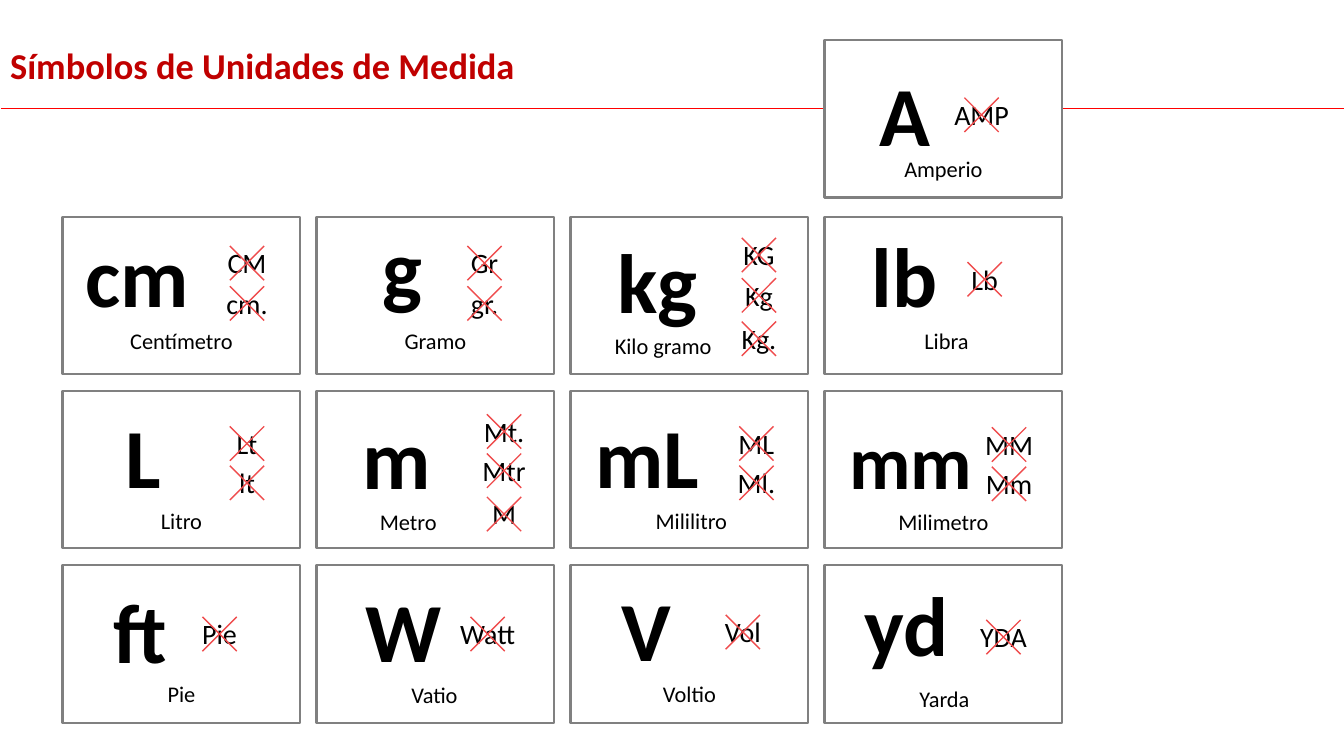
import pptx
import pptx.util
import pptx.dml.color
import pptx.enum.shapes
import pptx.enum.text
import pptx.oxml.ns
from lxml import etree

Pt = pptx.util.Pt
ALIGN = pptx.enum.text.PP_ALIGN
FONT = "Calibri"
COLORS = {"title": "C00000", "rule": "FF0000", "cross": "EF4C4D",
          "border": "808080", "card": "FFFFFF", "text": "000000"}

# Card grid
CARD_WIDTH, CARD_HEIGHT = 169.92, 112.32
FIRST_LEFT, COLUMN_STEP = 44.64, 181.44
ROW_TOPS = (28.8, 154.8, 279.36, 403.92)
NARROW = 131
CROSS_SIZE = 24.5

# Offsets are measured from the corner of each card:
# column, row, (symbol, left, top, width, height, size), (name, left, top, width),
# centre of the wrong forms, [(wrong form, width, top), ...]
CARDS = [
    (3, 0, ("A", 32.4, 12.2, 51.1, 80, 60), ("Amperio", 0, 78.5, CARD_WIDTH),
     112.2, [("AMP", 54, 37.4)]),
    (0, 1, ("cm", 9.4, 1.4, 89.3, 80, 60), ("Centímetro", 0, 75.6, CARD_WIDTH),
     131.8, [("CM", 42.5, 17.3), ("cm.", 44.6, 46.1)]),
    (1, 1, ("g", 40.3, -4.3, 43.2, 80, 60), ("Gramo", 0, 75.6, CARD_WIDTH),
     120, [("Gr", 34.6, 17.3), ("gr.", 33.8, 46.1)]),
    (2, 1, ("kg", 26.6, 5.8, 72, 80, 60), ("Kilo gramo", 0.7, 79.2, NARROW),
     134.6, [("KG", 36.7, 11.5), ("Kg", 34.6, 40.3), ("Kg.", 39.6, 71.3)]),
    (3, 1, ("lb", 26.6, 1.4, 61.9, 80, 60), ("Libra", 2.2, 75.6, CARD_WIDTH),
     114.4, [("Lb", 33.8, 28.8)]),
    (0, 2, ("L", 38.2, 5.8, 40.3, 80, 60), ("Litro", 0, 79.2, CARD_WIDTH),
     131.8, [("Lt", 29.5, 21.6), ("lt", 25.9, 49.7)]),
    (1, 2, ("m", 25.9, 6.5, 64.1, 80, 60), ("Metro", 0, 79.9, NARROW),
     134, [("Mt.", 43.9, 13), ("Mtr", 45.4, 41), ("M", 31.7, 72)]),
    (2, 2, ("mL", 10.8, 5.8, 89.3, 80, 60), ("Mililitro", 1.4, 79.2, CARD_WIDTH),
     132.8, [("ML", 40.3, 21.6), ("Ml.", 41.8, 49.7)]),
    (3, 2, ("mm", 10.8, 13, 103, 72.7, 54), ("Milimetro", 0, 79.9, CARD_WIDTH),
     131.8, [("MM", 49, 22.3), ("Mm", 48.2, 50.4)]),
    (0, 3, ("ft", 29.5, 6.5, 54.7, 80, 60), ("Pie", 0, 78.5, CARD_WIDTH),
     112.2, [("Pie", 39.6, 33.1)]),
    (1, 3, ("W", 28.1, 5.8, 69.1, 80, 60), ("Vatio", -0.7, 79.2, CARD_WIDTH),
     122.2, [("Watt", 54.7, 33.1)]),
    (2, 3, ("V", 29.5, 5, 50.4, 80, 60), ("Voltio", 0, 78.5, CARD_WIDTH),
     123.1, [("Vol", 40.3, 31.7)]),
    (3, 3, ("yd", 21.6, 1.4, 74.9, 80, 60), ("Yarda", 0.7, 82.1, CARD_WIDTH),
     127.8, [("YDA", 48.2, 35.3)]),
]


def color(name):
    return pptx.dml.color.RGBColor.from_string(COLORS[name])


def set_font(paragraph, size, color_name, bold=False):
    paragraph.font.name = FONT
    paragraph.font.size = Pt(size)
    paragraph.font.bold = bold
    paragraph.font.color.rgb = color(color_name)


def add_text(page, text, left, top, width, height, size,
             align=ALIGN.CENTER, bold=False, wrap=False):
    box = page.shapes.add_textbox(Pt(left), Pt(top), Pt(width), Pt(height))
    frame = box.text_frame
    frame.word_wrap = wrap
    frame.auto_size = pptx.enum.text.MSO_AUTO_SIZE.SHAPE_TO_FIT_TEXT
    paragraph = frame.paragraphs[0]
    paragraph.text = text
    paragraph.alignment = align
    set_font(paragraph, size, "text", bold)


def add_line(shapes, left, top, right, bottom, color_name, width):
    line = shapes.add_connector(pptx.enum.shapes.MSO_CONNECTOR.STRAIGHT,
                                Pt(left), Pt(top), Pt(right), Pt(bottom))
    line.line.color.rgb = color(color_name)
    line.line.width = Pt(width)
    properties = line._element.spPr
    etree.SubElement(properties, pptx.oxml.ns.qn("a:effectLst"))


def add_cross(page, left, top):
    cross = page.shapes.add_group_shape()
    right, bottom = left + CROSS_SIZE, top + CROSS_SIZE
    add_line(cross.shapes, left, top, right, bottom, "cross", 1)
    add_line(cross.shapes, left, bottom, right, top, "cross", 1)


def add_card(page, column, row, symbol, name, centre, wrong_forms):
    left = FIRST_LEFT + column * COLUMN_STEP
    top = ROW_TOPS[row]
    # Frame
    card = page.shapes.add_shape(pptx.enum.shapes.MSO_SHAPE.RECTANGLE, Pt(left),
                                 Pt(top), Pt(CARD_WIDTH), Pt(CARD_HEIGHT))
    card.shadow.inherit = False
    card.fill.solid()
    card.fill.fore_color.rgb = color("card")
    card.line.color.rgb = color("border")
    card.line.width = Pt(1.5)
    # Correct symbol and unit name
    text, across, down, width, height, size = symbol
    add_text(page, text, left + across, top + down, width, height, size,
             align=ALIGN.LEFT, bold=True)
    text, across, down, width = name
    add_text(page, text, left + across, top + down, width, 26.6, 16, wrap=True)
    # Crossed-out wrong forms
    for text, width, down in wrong_forms:
        add_text(page, text, left + centre - width / 2, top + down, width, 31.5, 20)
        add_cross(page, left + centre - CROSS_SIZE / 2, top + down + 3.6)


def set_title(page, text):
    title = page.shapes.title
    title.left, title.top = Pt(0), Pt(20.16)
    title.width, title.height = Pt(959.04), Pt(56.88)
    frame = title.text_frame
    frame.word_wrap = True
    frame.auto_size = pptx.enum.text.MSO_AUTO_SIZE.NONE
    frame.vertical_anchor = pptx.enum.text.MSO_ANCHOR.MIDDLE
    paragraph = frame.paragraphs[0]
    paragraph.text = text
    paragraph.alignment = ALIGN.JUSTIFY
    paragraph.line_spacing = 0.9
    set_font(paragraph, 26, "title", bold=True)


def main():
    deck = pptx.Presentation()
    deck.slide_width, deck.slide_height = Pt(960), Pt(540)
    page = deck.slides.add_slide(deck.slide_layouts[5])
    # Heading
    set_title(page, "Símbolos de Unidades de Medida")
    add_line(page.shapes, 0.72, 77.76, 960, 77.76, "rule", 0.75)
    # Unit cards
    for card in CARDS:
        add_card(page, *card)
    deck.save("out.pptx")


if __name__ == "__main__":
    main()
